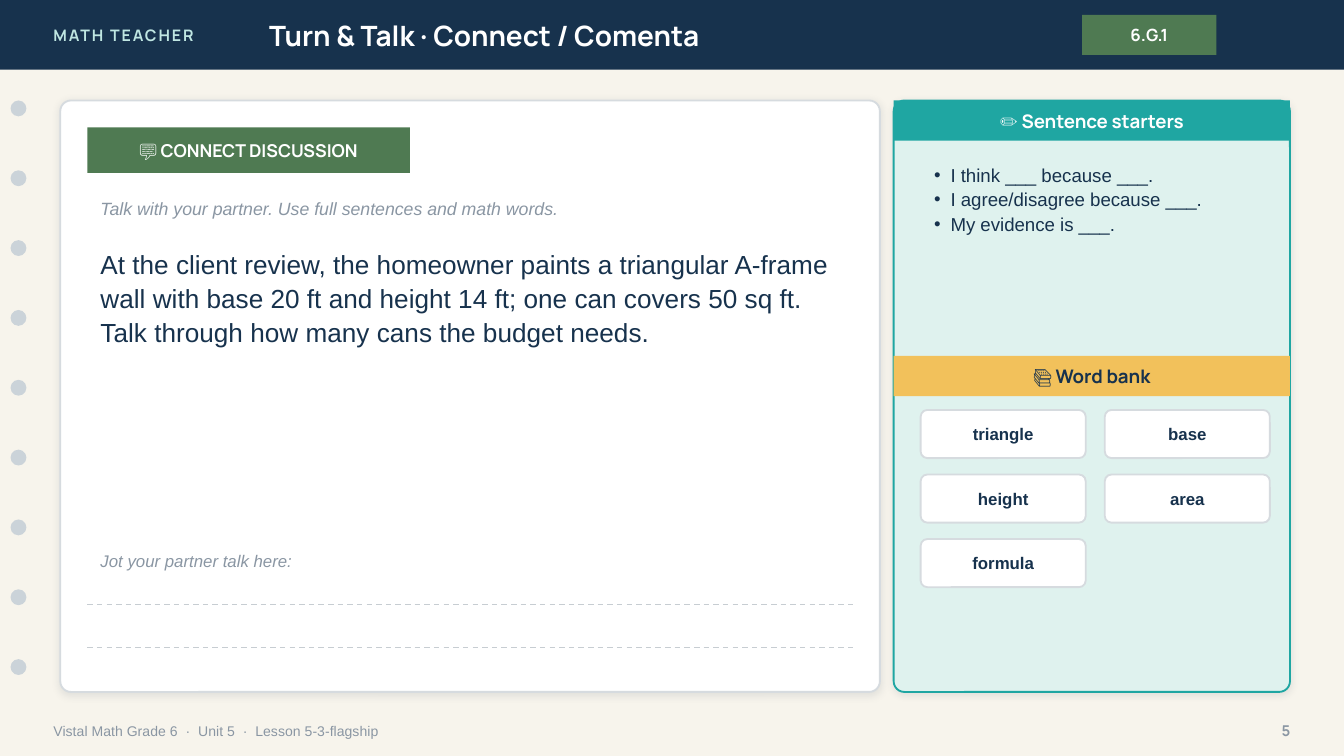
from dataclasses import dataclass

from lxml import etree
from pptx import Presentation
from pptx.dml.color import RGBColor
from pptx.enum.dml import MSO_LINE_DASH_STYLE as Dash
from pptx.enum.shapes import MSO_CONNECTOR as Connector
from pptx.enum.shapes import MSO_SHAPE as Shape
from pptx.enum.text import MSO_ANCHOR as Anchor
from pptx.enum.text import MSO_AUTO_SIZE as AutoSize
from pptx.enum.text import PP_ALIGN as Align
from pptx.oxml import parse_xml
from pptx.oxml.ns import nsdecls, qn
from pptx.util import Cm, Pt


@dataclass(frozen=True)
class Theme:
    heading_font: str = "Manrope"
    body_font: str = "Arial"
    paper: str = "F7F4EC"
    white: str = "FFFFFF"
    navy: str = "17324D"
    mint: str = "BFE6E2"
    pale_mint: str = "DFF2EE"
    teal: str = "1FA6A2"
    green: str = "4F7A52"
    amber: str = "F2C15B"
    gray: str = "8A96A3"
    dot: str = "CBD3D9"
    border: str = "D6DBDF"
    rule: str = "C7CDD2"
    shadow: str = "1C2E42"
    title_size: float = 15
    prompt_size: float = 14
    section_size: float = 10
    tag_size: float = 9.5
    label_size: float = 9
    brand_size: float = 8.5
    page_size: float = 8
    footer_size: float = 7.5


THEME = Theme()
STARTERS = [
    "I think ___ because ___.",
    "I agree/disagree because ___.",
    "My evidence is ___.",
]
WORDS = ["triangle", "base", "height", "area", "formula"]
PROMPT = (
    "At the client review, the homeowner paints a triangular A-frame wall "
    "with base 20 ft and height 14 ft; one can covers 50 sq ft. "
    "Talk through how many cans the budget needs."
)


def color(value):
    return RGBColor.from_string(value)


def place(shape, box):
    shape.left, shape.top, shape.width, shape.height = map(Cm, box)


def write(shape, lines, size, ink, font=THEME.body_font, bold=False, italic=False,
          align=Align.LEFT, anchor=Anchor.MIDDLE, spacing=1.0, bullet_indent=None):
    frame = shape.text_frame
    frame.word_wrap = True
    frame.auto_size = AutoSize.NONE
    frame.vertical_anchor = anchor
    frame.text = "\n".join(lines)
    for paragraph in frame.paragraphs:
        paragraph.alignment = align
        paragraph.line_spacing = spacing
        paragraph.space_before = Pt(0)
        if bullet_indent:
            add_bullet(paragraph, bullet_indent)
        paragraph.font.name = font
        paragraph.font.size = Pt(size)
        paragraph.font.bold = bold
        paragraph.font.italic = italic
        paragraph.font.color.rgb = color(ink)


def add_bullet(paragraph, indent):
    properties = paragraph._p.get_or_add_pPr()
    properties.set("marL", str(Cm(indent)))
    properties.set("indent", str(-Cm(indent)))
    etree.SubElement(properties, qn("a:buChar")).set("char", "•")


def add_text(slide, box, text, size, ink, **style):
    text_box = slide.shapes.add_textbox(*map(Cm, box))
    write(text_box, [text], size, ink, **style)
    return text_box


def fill_placeholder(placeholder, box, lines, size, ink, **style):
    """Place and write a placeholder, bringing it in front of the shapes so far."""
    place(placeholder, box)
    write(placeholder, lines, size, ink, **style)
    placeholder.element.getparent().append(placeholder.element)


def add_block(slide, kind, box, fill, line=None, corner=None):
    shape = slide.shapes.add_shape(kind, *map(Cm, box))
    shape.shadow.inherit = False
    shape.fill.solid()
    shape.fill.fore_color.rgb = color(fill)
    if line:
        shape.line.color.rgb = color(line)
        shape.line.width = Pt(1)
    else:
        shape.line.fill.background()
    if corner is not None:
        shape.adjustments[0] = corner
    return shape


def add_label(slide, box, text, fill, size, ink=THEME.white):
    shape = add_block(slide, Shape.RECTANGLE, box, fill)
    write(shape, [text], size, ink, font=THEME.heading_font, bold=True, align=Align.CENTER)


def add_card(slide, box, fill, line, corner):
    """Add a rounded panel with a soft shadow below it."""
    card = add_block(slide, Shape.ROUNDED_RECTANGLE, box, fill, line, corner)
    effects = card.element.spPr.find(qn("a:effectLst"))
    effects.append(parse_xml(
        f'<a:outerShdw {nsdecls("a")} blurRad="{Pt(4)}" dist="{Pt(1)}" dir="5400000" '
        f'algn="ctr" rotWithShape="0"><a:srgbClr val="{THEME.shadow}">'
        '<a:alpha val="10000"/></a:srgbClr></a:outerShdw>'
    ))


def add_writing_line(slide, left, right, top):
    line = slide.shapes.add_connector(Connector.STRAIGHT, Cm(left), Cm(top), Cm(right), Cm(top))
    line.line.color.rgb = color(THEME.rule)
    line.line.width = Pt(0.75)
    line.line.dash_style = Dash.DASH
    etree.SubElement(line.element.spPr, qn("a:effectLst"))


def add_header(slide):
    add_block(slide, Shape.RECTANGLE, (0, 0, 25.4, 1.32), THEME.navy)
    brand = add_text(slide, (0.76, 0, 6.1, 1.32), "MATH TEACHER", THEME.brand_size,
                     THEME.mint, font=THEME.heading_font, bold=True)
    brand.text_frame.paragraphs[0].runs[0]._r.get_or_add_rPr().set("spc", "100")
    fill_placeholder(slide.shapes.title, (4.83, 0, 14.22, 1.32),
                     ["Turn & Talk · Connect / Comenta"], THEME.title_size, THEME.white,
                     font=THEME.heading_font, bold=True)
    add_label(slide, (20.45, 0.28, 2.54, 0.76), "6.G.1", THEME.green, THEME.label_size)


def add_binder_dots(slide):
    for index in range(9):
        add_block(slide, Shape.OVAL, (0.2, 1.9 + 1.32 * index, 0.3, 0.3), THEME.dot)


def add_footer(slide):
    add_text(slide, (0.76, 13.46, 17.78, 0.71),
             "Vistal Math Grade 6  ·  Unit 5  ·  Lesson 5-3-flagship",
             THEME.footer_size, THEME.gray)
    add_text(slide, (23.37, 13.46, 1.27, 0.71), "5", THEME.page_size, THEME.gray,
             font=THEME.heading_font, bold=True, align=Align.RIGHT)


def add_discussion(slide):
    left, width = 1.65, 14.48
    add_card(slide, (1.14, 1.9, 15.49, 11.18), THEME.white, THEME.border, 0.018)
    add_label(slide, (left, 2.41, 6.1, 0.86), "💬 CONNECT DISCUSSION", THEME.green, THEME.tag_size)
    add_text(slide, (left, 3.56, width, 0.76),
             "Talk with your partner. Use full sentences and math words.",
             THEME.tag_size, THEME.gray, italic=True)
    add_text(slide, (left, 4.52, width, 5.08), PROMPT, THEME.prompt_size, THEME.navy,
             anchor=Anchor.TOP, spacing=1.08)
    add_text(slide, (left, 10.29, width, 0.64), "Jot your partner talk here:",
             THEME.label_size, THEME.gray, italic=True)
    for top in (11.43, 12.24):
        add_writing_line(slide, left, left + width, top)


def add_support_panel(slide):
    left, width = 16.89, 7.49
    add_card(slide, (left, 1.9, width, 11.18), THEME.pale_mint, THEME.teal, 0.027)
    add_label(slide, (left, 1.9, width, 0.76), "✏️ Sentence starters", THEME.teal,
              THEME.section_size)
    fill_placeholder(slide.placeholders[1], (17.4, 2.92, 6.6, 3.56), STARTERS,
                     THEME.section_size, THEME.navy, anchor=Anchor.TOP, spacing=1.1,
                     bullet_indent=0.31)
    add_label(slide, (left, 6.73, width, 0.76), "📚 Word bank", THEME.amber,
              THEME.section_size, THEME.navy)
    for index, word in enumerate(WORDS):
        row, column = divmod(index, 2)
        chip = add_block(slide, Shape.ROUNDED_RECTANGLE,
                         (17.4 + 3.48 * column, 7.75 + 1.22 * row, 3.12, 0.91),
                         THEME.white, THEME.border, 0.139)
        write(chip, [word], THEME.label_size, THEME.navy, bold=True, align=Align.CENTER)


def main():
    presentation = Presentation()
    presentation.slide_width, presentation.slide_height = Cm(25.4), Cm(14.29)
    slide = presentation.slides.add_slide(presentation.slide_layouts[1])
    slide.background.fill.solid()
    slide.background.fill.fore_color.rgb = color(THEME.paper)
    add_header(slide)
    add_binder_dots(slide)
    add_footer(slide)
    add_discussion(slide)
    add_support_panel(slide)
    presentation.save("out.pptx")


if __name__ == "__main__":
    main()
